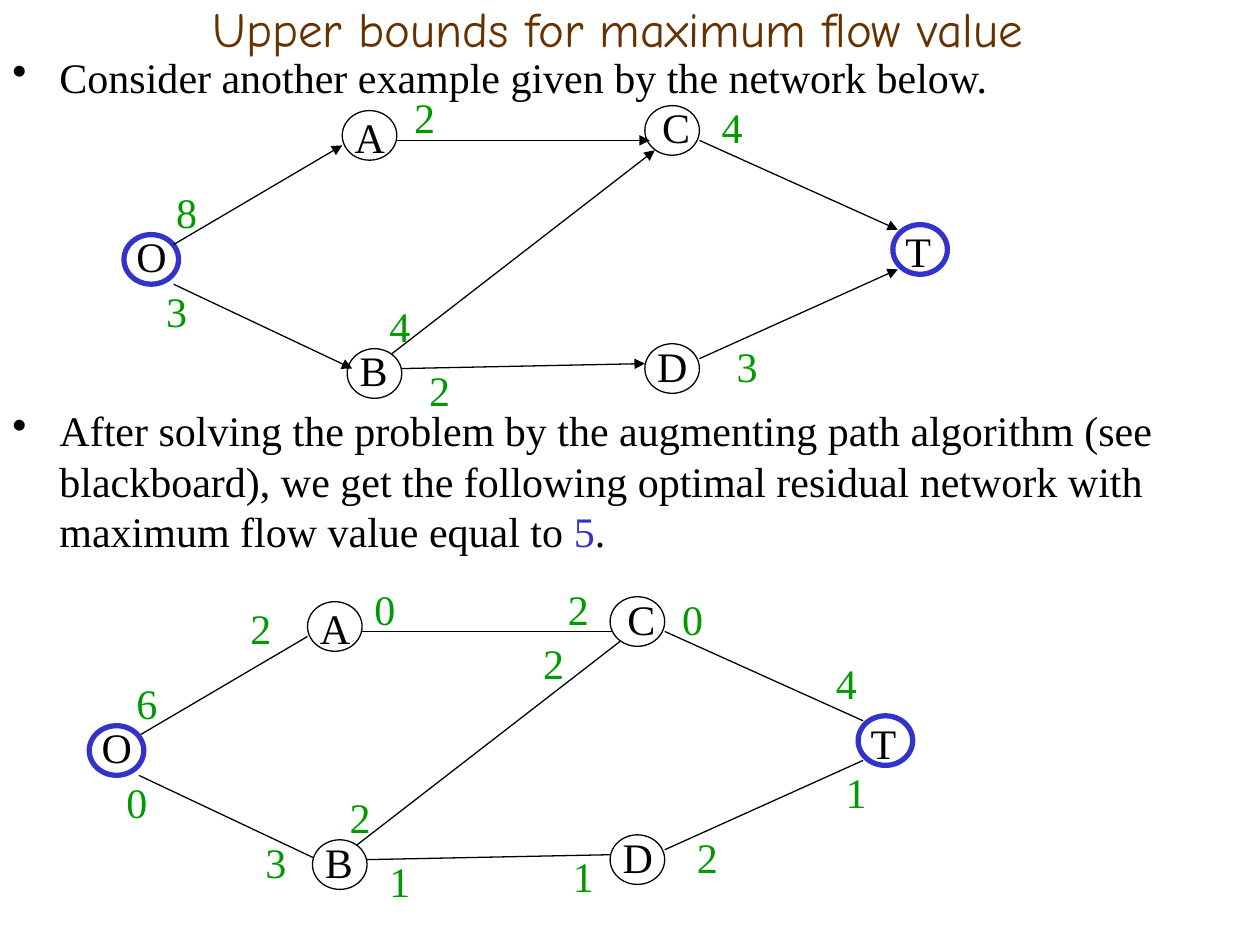
from lxml import etree
from pptx import Presentation
from pptx import util as u
from pptx.dml.color import RGBColor
from pptx.enum import shapes, text
from pptx.oxml.ns import qn

BLACK = RGBColor(0x00, 0x00, 0x00)
WHITE = RGBColor(0xFF, 0xFF, 0xFF)
BROWN = RGBColor(0x66, 0x33, 0x00)
BLUE = RGBColor(0x33, 0x33, 0xCC)
GREEN = RGBColor(0x00, 0x99, 0x00)
TITLE_FONT, BODY_FONT = "Comic Neue", "Times New Roman"

# All positions below are in cm, relative to the box of a network
NODE_WIDTH, NODE_HEIGHT, TEXT_HEIGHT = 1.1, 1.0, 1.27
# name: node left, node top, letter shift right, letter shift up
NODES = {
    "T": (15.5, 2.4, 0, 0.1),
    "D": (10.5, 4.8, 0, 0.2),
    "C": (10.5, 0, 0.1, 0.2),
    "B": (4.5, 4.9, 0, 0.2),
    "A": (4.4, 0.1, 0, 0.1),
    "O": (0, 2.6, 0, 0.2),
}
TERMINALS = "OT"
# edge: start, end, label place near the start, label place near the end
EDGES = {
    "OA": ((1.0, 2.8), (4.4, 0.8), (0.8, 1.5), (3.0, 0)),
    "OB": ((1.0, 3.6), (4.6, 5.3), (0.6, 3.5), (3.3, 4.7)),
    "AC": ((5.5, 0.7), (10.6, 0.7), (5.6, -0.4), (9.4, -0.4)),
    "BD": ((5.6, 5.3), (10.5, 5.2), (5.9, 5.1), (9.5, 5.0)),
    "DT": ((11.6, 5.1), (15.6, 3.3), (12.1, 4.6), (15.0, 3.3)),
    "CT": ((11.6, 0.7), (15.6, 2.5), (11.8, -0.2), (14.8, 1.1)),
    "BC": ((5.4, 5.0), (10.7, 0.9), (5.1, 3.8), (8.9, 0.7)),
}
CAPACITIES = {"OA": "8", "OB": "3", "AC": "2", "BD": "2", "DT": "3", "CT": "4", "BC": "4"}
RESIDUALS = {"OA": "62", "OB": "03", "AC": "02", "BD": "11", "DT": "21", "CT": "04", "BC": "22"}


def style_run(run, size, font, color):
    run.font.size, run.font.name = u.Pt(size), font
    run.font.color.rgb = color


def add_text(slide, left, top, width, height, content, color=BLACK, size=24, font=BODY_FONT):
    box = slide.shapes.add_textbox(u.Cm(left), u.Cm(top), u.Cm(width), u.Cm(height))
    frame = box.text_frame
    frame.word_wrap = True
    frame.text = content
    for paragraph in frame.paragraphs:
        for run in paragraph.runs:
            style_run(run, size, font, color)
    return frame


def add_title(slide, left, top, width, height):
    frame = add_text(slide, left, top, width, height,
                     "Upper bounds for maximum flow value", BROWN, 28, TITLE_FONT)
    frame.vertical_anchor = text.MSO_ANCHOR.MIDDLE
    frame.paragraphs[0].alignment = text.PP_ALIGN.CENTER


def add_body(slide, left, top, width, height):
    frame = add_text(
        slide, left, top, width, height,
        "Consider another example given by the network below.\n"
        "After solving the problem by the augmenting path algorithm (see blackboard), "
        "we get the following optimal residual network with maximum flow value equal to ")
    # Bullets with a hanging indent
    for paragraph in frame.paragraphs:
        properties = paragraph._p.get_or_add_pPr()
        properties.set("marL", str(u.Cm(0.95)))
        properties.set("indent", str(u.Cm(-0.95)))
        etree.SubElement(properties, qn("a:buChar"), char="•")
    # Flow value, and room for the first network above its paragraph
    conclusion = frame.paragraphs[1]
    conclusion.space_before = u.Pt(173)
    for content, color in (("5", BLUE), (".", BLACK)):
        run = conclusion.add_run()
        run.text = content
        style_run(run, 24, BODY_FONT, color)


def add_nodes(slide, left, top):
    for name, (x, y, _, _) in NODES.items():
        node = slide.shapes.add_shape(
            shapes.MSO_SHAPE.OVAL, u.Cm(left + x), u.Cm(top + y),
            u.Cm(NODE_WIDTH), u.Cm(NODE_HEIGHT))
        node.shadow.inherit = False
        node.fill.solid()
        node.fill.fore_color.rgb = WHITE
        terminal = name in TERMINALS
        node.line.color.rgb = BLUE if terminal else BLACK
        node.line.width = u.Pt(3 if terminal else 0.75)
    for name, (x, y, right, up) in NODES.items():
        add_text(slide, left + x + right, top + y - up,
                 NODE_WIDTH - right, TEXT_HEIGHT, name)


def add_edges(slide, left, top, arrows):
    for (x1, y1), (x2, y2), _, _ in EDGES.values():
        edge = slide.shapes.add_connector(
            shapes.MSO_CONNECTOR.STRAIGHT, u.Cm(left + x1), u.Cm(top + y1),
            u.Cm(left + x2), u.Cm(top + y2))
        edge.line.color.rgb = BLACK
        edge.line.width = u.Pt(0.75)
        if arrows:
            etree.SubElement(edge.line._get_or_add_ln(), qn("a:tailEnd"), type="triangle")
        etree.SubElement(edge._element.spPr, qn("a:effectLst"))


def add_labels(slide, left, top, values, start_shift=0):
    """Each value holds one digit for the edge's start and maybe one for its end."""
    for edge, digits in values.items():
        places = EDGES[edge][2:]
        for digit, (x, y), shift, width in zip(digits, places, (start_shift, 0), (1.0, 0.9)):
            add_text(slide, left + x + shift, top + y, width, TEXT_HEIGHT, digit, GREEN)


def add_capacity_network(slide, left, top):
    add_nodes(slide, left, top)
    add_edges(slide, left, top, arrows=True)
    add_labels(slide, left, top, CAPACITIES)


def add_residual_network(slide, left, top):
    add_edges(slide, left, top, arrows=False)
    add_nodes(slide, left, top)
    add_labels(slide, left, top, RESIDUALS, start_shift=-0.1)


def main():
    presentation = Presentation()
    presentation.slide_width, presentation.slide_height = u.Cm(25.4), u.Cm(19.05)
    slide = presentation.slides.add_slide(presentation.slide_layouts[6])
    add_title(slide, 1.1, 0, 22.7, 1.12)
    add_body(slide, 0, 0.92, 25.4, 18.13)
    add_capacity_network(slide, 2.5, 2.13)
    add_residual_network(slide, 1.8, 12.03)
    presentation.save("out.pptx")


if __name__ == "__main__":
    main()
